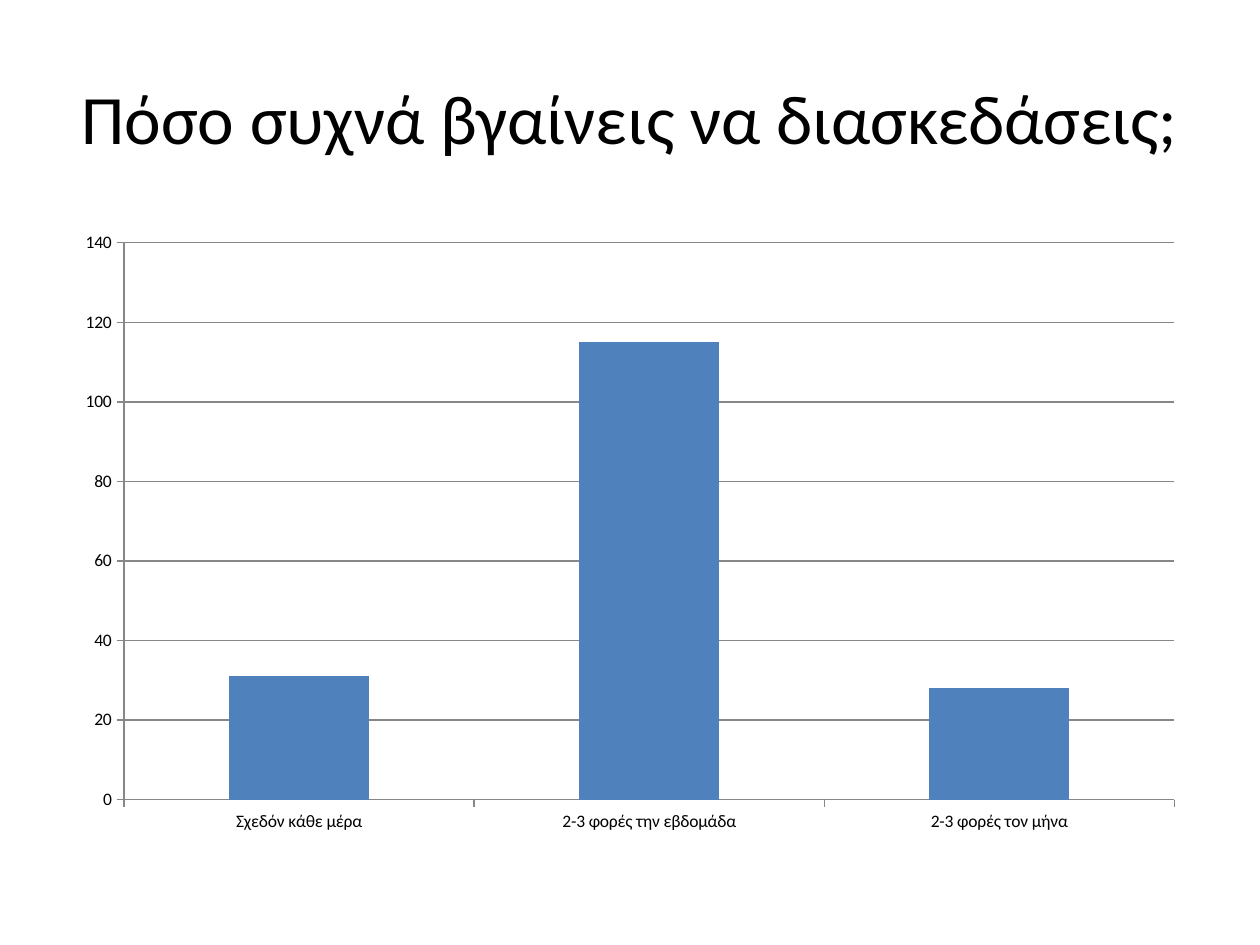
from dataclasses import dataclass

from pptx import Presentation
from pptx.chart.data import CategoryChartData
from pptx.dml.color import RGBColor
from pptx.enum.chart import XL_CHART_TYPE, XL_TICK_MARK
from pptx.enum.text import MSO_ANCHOR, MSO_AUTO_SIZE, PP_ALIGN
from pptx.util import Inches, Pt


@dataclass(frozen=True)
class Theme:
    """Fonts, sizes and colours of the slide."""
    font: str = "Calibri"
    title_size: float = 39.6
    chart_size: float = 10
    text: str = "000000"
    bar: str = "4F81BD"
    line: str = "878787"


THEME = Theme()
TITLE = "Πόσο συχνά βγαίνεις να διασκεδάσεις;"
ANSWERS = {
    "Σχεδόν κάθε μέρα": 31,
    "2-3 φορές την εβδομάδα": 115,
    "2-3 φορές τον μήνα": 28,
}


def set_font(font, size, color=THEME.text):
    """Apply the theme font at a size and colour."""
    font.name = THEME.font
    font.size = Pt(size)
    font.color.rgb = RGBColor.from_string(color)


def set_line(line):
    """Apply the thin grey chart line."""
    line.color.rgb = RGBColor.from_string(THEME.line)
    line.width = Pt(0.75)


def write_text(tf, text, *, size, align=PP_ALIGN.LEFT, anchor=MSO_ANCHOR.TOP):
    """Write one formatted paragraph into a text frame."""
    tf.word_wrap = True
    tf.auto_size = MSO_AUTO_SIZE.NONE
    tf.vertical_anchor = anchor
    p = tf.paragraphs[0]
    p.alignment = align
    r = p.add_run()
    r.text = text
    set_font(r.font, size)


def add_title(s, text):
    """Place and fill the title placeholder."""
    sp = s.shapes.title
    sp.left, sp.top = Inches(0.5), Inches(0.3)
    sp.width, sp.height = Inches(9), Inches(1.25)
    write_text(sp.text_frame, text, size=THEME.title_size,
               align=PP_ALIGN.CENTER, anchor=MSO_ANCHOR.MIDDLE)


def add_column_chart(s, values):
    """Add a single-series column chart."""
    data = CategoryChartData()
    data.categories = list(values)
    data.add_series("Series 1", list(values.values()))
    chart = s.shapes.add_chart(
        XL_CHART_TYPE.COLUMN_CLUSTERED, Inches(0.5), Inches(1.75),
        Inches(9), Inches(4.95), data).chart
    chart.has_title = False
    chart.has_legend = False
    set_font(chart.font, THEME.chart_size)

    plot = chart.plots[0]
    plot.vary_by_categories = False
    plot.gap_width = 150
    fill = plot.series[0].format.fill
    fill.solid()
    fill.fore_color.rgb = RGBColor.from_string(THEME.bar)

    for axis in (chart.category_axis, chart.value_axis):
        axis.major_tick_mark = XL_TICK_MARK.OUTSIDE
        axis.minor_tick_mark = XL_TICK_MARK.NONE
        set_line(axis.format.line)
    axis = chart.value_axis
    axis.minimum_scale, axis.maximum_scale, axis.major_unit = 0, 140, 20
    axis.has_major_gridlines = True
    set_line(axis.major_gridlines.format.line)


def main():
    """Build and save the slide."""
    prs = Presentation()
    prs.slide_width, prs.slide_height = Inches(10), Inches(7.5)
    s = prs.slides.add_slide(prs.slide_layouts[5])
    add_title(s, TITLE)
    add_column_chart(s, ANSWERS)
    prs.save("out.pptx")


if __name__ == "__main__":
    main()
